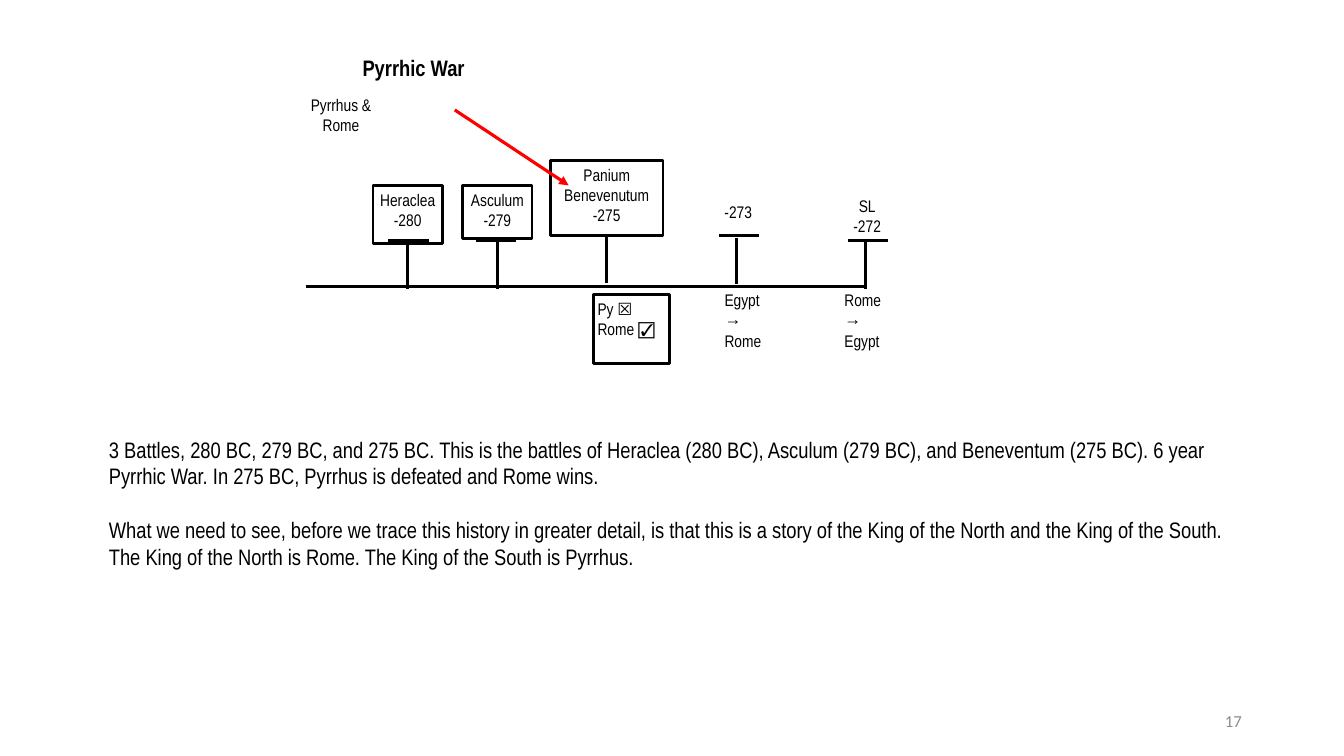
from dataclasses import dataclass
from itertools import groupby

from lxml import etree
from pptx import Presentation
from pptx import util as u
from pptx.dml.color import RGBColor
from pptx.enum import shapes, text
from pptx.oxml.ns import qn

COLOURS = {"ink": "000000", "arrow": "FF0000", "number": "8C8C8C"}
NARROW, SYMBOL = "Arial Narrow", "Arial"
CENTER, LEFT = text.PP_ALIGN.CENTER, text.PP_ALIGN.LEFT
INSET = 0.1
CAP_WIDTH, CAP_OFFSET = 1.02, 0.46
STEM_GAP, STEM_LENGTH = 0.05, 1.17
AXIS_Y, LAST_STEM_X = 7.21, 21.82


@dataclass
class Label:
    """Lines of text in a place given in centimetres."""
    lines: list[str]
    left: float
    top: float
    width: float
    height: float
    framed: bool = False
    align: text.PP_ALIGN = CENTER


@dataclass
class Event:
    """A dated label with its cap and the stem down to the timeline."""
    label: Label
    stem_x: float
    cap_y: float


EVENTS = [
    Event(Label(["Heraclea", "-280"], 9.4, 4.67, 1.75, 1.47, True), 10.24, 6.05),
    Event(Label(["Asculum", "-279"], 11.66, 4.67, 1.75, 1.35, True), 12.45, 6.05),
    Event(Label(["Panium", "Benevenutum", "-275"], 13.87, 4.04, 2.84, 1.9, True),
          15.39, 5.92),
    Event(Label(["-273"], 17.73, 4.98, 1.75, 0.79), 18.57, 5.94),
    Event(Label(["SL", "-272"], 20.98, 4.83, 1.75, 1.32), LAST_STEM_X, 6.05),
]
NOTES = [
    Label(["Pyrrhus & Rome"], 7.72, 2.29, 1.75, 1.4),
    Label(["Py ☒", "Rome ☑"], 14.96, 7.42, 1.91, 1.75, True, LEFT),
    Label(["Egypt", "→", "Rome"], 18.16, AXIS_Y, 1.42, 1.75, align=LEFT),
    Label(["Rome", "→", "Egypt"], 21.18, AXIS_Y, 1.42, 1.75, align=LEFT),
]
STORY = [
    "3 Battles, 280 BC, 279 BC, and 275 BC. This is the battles of Heraclea (280 BC), "
    "Asculum (279 BC), and Beneventum (275 BC). 6 year Pyrrhic War. In 275 BC, "
    "Pyrrhus is defeated and Rome wins.",
    "What we need to see, before we trace this history in greater detail, is that this "
    "is a story of the King of the North and the King of the South. The King of the "
    "North is Rome. The King of the South is Pyrrhus.",
]


def rgb(colour: str) -> RGBColor:
    return RGBColor.from_string(COLOURS[colour])


def set_all(target, values: dict) -> None:
    for attribute, value in values.items():
        setattr(target, attribute, value)


def place(shape, left: float, top: float, width: float, height: float) -> None:
    set_all(shape, {"left": u.Cm(left), "top": u.Cm(top),
                    "width": u.Cm(width), "height": u.Cm(height)})


def write(shape, lines: list[str], size: float, align, font: str = NARROW,
          bold: bool = False, colour: str = "ink", inset: float | None = None,
          anchor=text.MSO_ANCHOR.TOP) -> None:
    frame = shape.text_frame
    set_all(frame, {"word_wrap": True, "auto_size": text.MSO_AUTO_SIZE.NONE,
                    "vertical_anchor": anchor})
    if inset is not None:
        sides = ("left", "top", "right", "bottom")
        set_all(frame, {f"margin_{side}": u.Cm(inset) for side in sides})
    for index, line in enumerate(lines):
        paragraph = frame.add_paragraph() if index else frame.paragraphs[0]
        paragraph.alignment = align
        for is_mark, letters in groupby(line, key=lambda letter: letter in "☒☑"):
            run = paragraph.add_run()
            run.text = "".join(letters)
            set_all(run.font, {"name": SYMBOL if is_mark else font,
                               "size": u.Pt(size), "bold": bold})
            run.font.color.rgb = rgb(colour)


def draw_label(slide, label: Label):
    area = [u.Cm(v) for v in (label.left, label.top, label.width, label.height)]
    if label.framed:
        shape = slide.shapes.add_shape(shapes.MSO_SHAPE.RECTANGLE, *area)
        shape.shadow.inherit = False
        shape.fill.background()
        shape.line.color.rgb = rgb("ink")
        shape.line.width = u.Pt(2)
    else:
        shape = slide.shapes.add_textbox(*area)
    write(shape, label.lines, 12, label.align, inset=INSET)
    return shape


def draw_line(slide, x1: float, y1: float, x2: float, y2: float,
              colour: str = "ink", width: float = 2):
    line = slide.shapes.add_connector(
        shapes.MSO_CONNECTOR.STRAIGHT, u.Cm(x1), u.Cm(y1), u.Cm(x2), u.Cm(y2))
    line.line.color.rgb = rgb(colour)
    line.line.width = u.Pt(width)
    etree.SubElement(line._element.spPr, qn("a:effectLst"))
    return line


def draw_event(slide, event: Event) -> None:
    label = event.label
    box = draw_label(slide, label)
    cap_left = event.stem_x - CAP_OFFSET
    draw_line(slide, cap_left, event.cap_y, cap_left + CAP_WIDTH, event.cap_y)
    x = label.left + label.width / 2 if label.framed else event.stem_x
    top = event.cap_y + STEM_GAP
    stem = draw_line(slide, x, top, x, top + STEM_LENGTH)
    if label.framed:
        stem.begin_connect(box, 2)


def main() -> None:
    deck = Presentation()
    set_all(deck, {"slide_width": u.Cm(33.87), "slide_height": u.Cm(19.05)})
    slide = deck.slides.add_slide(deck.slide_layouts[1])

    # Heading
    heading = slide.shapes.title
    place(heading, 8.33, 1.27, 4.19, 0.86)
    write(heading, ["Pyrrhic War"], 16, CENTER, bold=True, inset=INSET)

    # Timeline with its events and outcomes
    draw_line(slide, 7.7, AXIS_Y, LAST_STEM_X, AXIS_Y)
    for event in EVENTS:
        draw_event(slide, event)
    for note in NOTES:
        draw_label(slide, note)

    # Arrow to the decisive battle
    arrow = draw_line(slide, 11.46, 2.77, 14.33, 4.67, "arrow", 2.25)
    etree.SubElement(arrow.line._get_or_add_ln(), qn("a:tailEnd"), type="triangle")

    # Story below the timeline
    story = slide.placeholders[1]
    place(story, 2.49, 10.85, 29.13, 4.45)
    write(story, STORY, 16, LEFT)
    for index, paragraph in enumerate(story.text_frame.paragraphs):
        paragraph.space_before = u.Pt(19 * index)
        properties = paragraph._p.get_or_add_pPr()
        properties.set("marL", "0")
        properties.set("indent", "0")
        etree.SubElement(properties, qn("a:buNone"))

    # Slide number
    number = slide.shapes.add_textbox(u.Cm(23.93), u.Cm(17.65), u.Cm(7.62), u.Cm(1.02))
    write(number, ["17"], 12, text.PP_ALIGN.RIGHT, font="Calibri", colour="number",
          anchor=text.MSO_ANCHOR.MIDDLE)

    deck.save("out.pptx")


if __name__ == "__main__":
    main()
